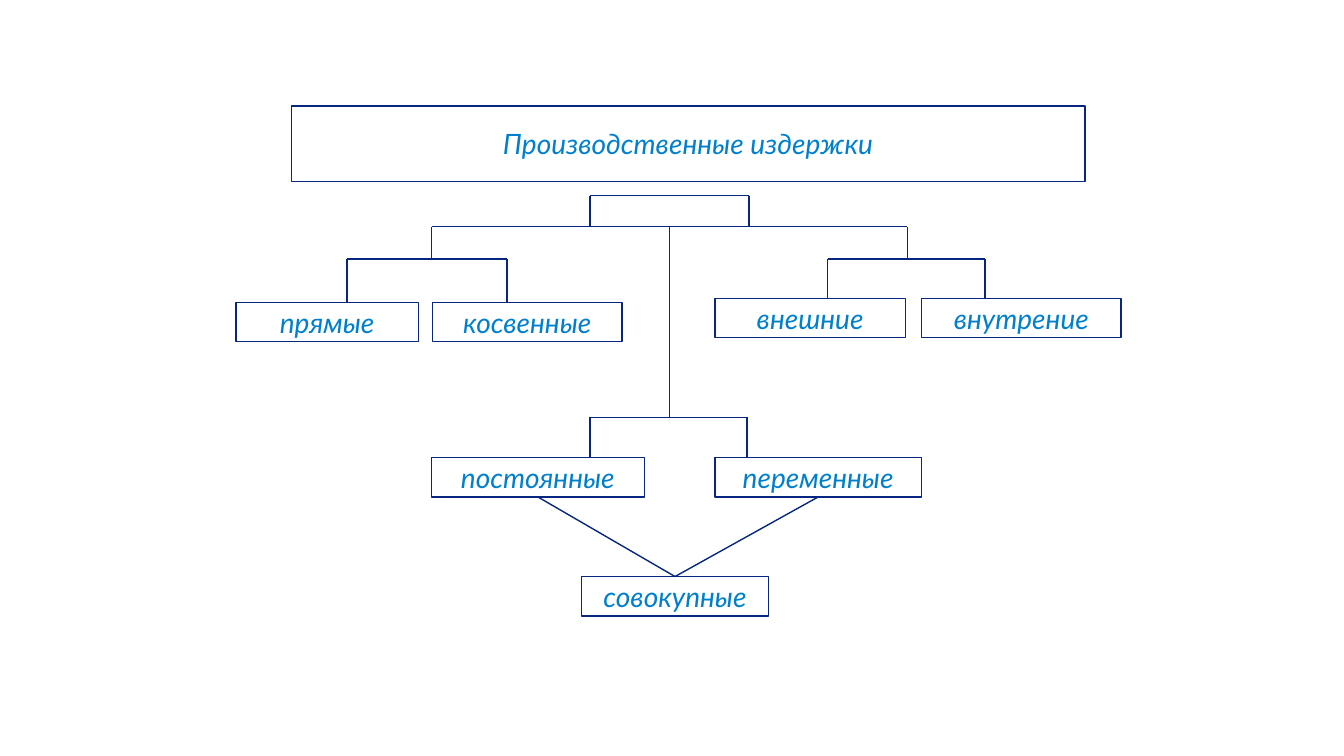
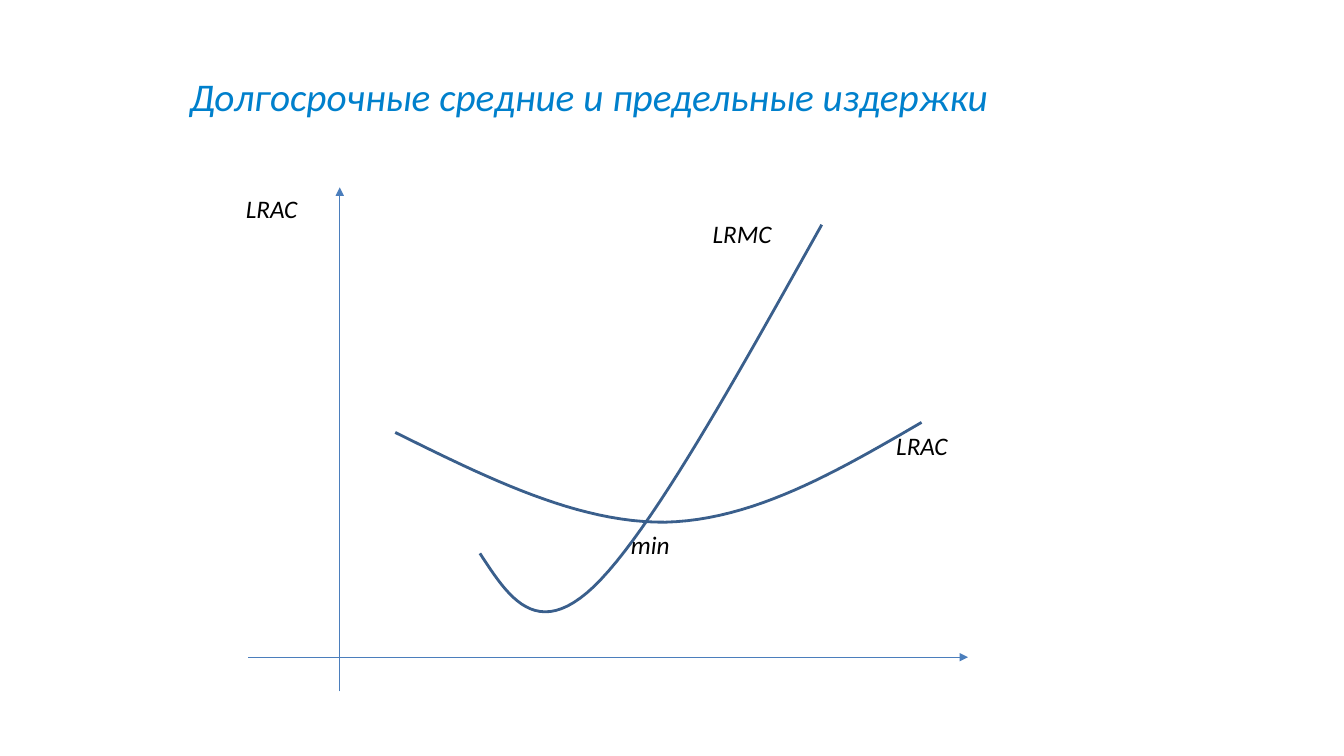
from typing import NamedTuple

from lxml.etree import SubElement
from pptx import Presentation
from pptx.dml.color import RGBColor
from pptx.enum.shapes import MSO_CONNECTOR as CONN, MSO_SHAPE as SHAPE
from pptx.enum.text import MSO_ANCHOR as ANCHOR, MSO_AUTO_SIZE as AUTO, PP_ALIGN as ALIGN
from pptx.oxml.ns import qn
from pptx.util import Inches, Pt

NAVY = RGBColor(0x06, 0x26, 0x80)
AZURE = RGBColor(0x00, 0x80, 0xCC)
AXIS_BLUE = RGBColor(0x4B, 0x7E, 0xBC)
CURVE_BLUE = RGBColor(0x3A, 0x5F, 0x8C)
WHITE = RGBColor(0xFF, 0xFF, 0xFF)
BLACK = RGBColor(0x00, 0x00, 0x00)
TITLE_ONLY = 5
BOX_H = 0.39
CURVE_STEPS = 24


class Box(NamedTuple):
    text: str
    x: float
    y: float
    w: float
    h: float = BOX_H


class Bracket(NamedTuple):
    left: float
    right: float
    top: float
    bottom: float


class Label(NamedTuple):
    text: str
    x: float
    y: float
    w: float


class Line(NamedTuple):
    x1: float
    y1: float
    x2: float
    y2: float


ROOT = Box("Производственные издержки", 2.89, 1.05, 7.87, 0.75)
COSTS = [
    Box("прямые", 2.34, 3, 1.81),
    Box("косвенные", 4.29, 3, 1.88),
    Box("внешние", 7.09, 2.96, 1.89),
    Box("внутрение", 9.14, 2.96, 1.98),
    Box("постоянные", 4.28, 4.54, 2.11),
    Box("переменные", 7.09, 4.54, 2.05),
    Box("совокупные", 5.77, 5.72, 1.85),
]
BRACKETS = [
    Bracket(5.85, 7.43, 1.94, 2.25),
    Bracket(4.28, 9, 2.25, 2.57),
    Bracket(3.44, 5.03, 2.57, 3),
    Bracket(8.21, 9.77, 2.57, 2.96),
    Bracket(5.85, 7.41, 4.14, 4.54),
]
STEM = Line(6.64, 2.25, 6.64, 4.14)

CHART_TITLE = Box("Долгосрочные средние и предельные издержки", 1.78, 0.67, 9.98, 0.57)
AXES = [Line(3.37, 6.86, 3.37, 1.86), Line(2.46, 6.52, 9.6, 6.52)]
LRAC_CURVE = [(3.92, 4.29), (4.83, 4.74), (5.73, 5.19), (6.6, 5.18),
              (7.47, 5.16), (8.3, 4.68), (9.14, 4.19)]
LRMC_CURVE = [(4.76, 5.49), (5.04, 5.92), (5.32, 6.36), (5.89, 5.82),
              (6.46, 5.27), (7.3, 3.75), (8.15, 2.23)]
LABELS = [
    Label("LRAC", 2.34, 1.87, 0.72),
    Label("LRAC", 8.79, 4.22, 0.72),
    Label("LRMC", 6.97, 2.12, 0.79),
    Label("min", 6.16, 5.2, 0.59),
]


def write(s, text: str, *, size: float, font: str = "Calibri", color: RGBColor = AZURE,
          align=ALIGN.LEFT, anchor=ANCHOR.TOP, wrap: bool = True):
    tf = s.text_frame
    tf.auto_size = AUTO.NONE
    tf.word_wrap = wrap
    tf.vertical_anchor = anchor
    p = tf.paragraphs[0]
    p.alignment = align
    r = p.add_run()
    r.text = text
    r.font.name = font
    r.font.size = Pt(size)
    r.font.italic = True
    r.font.color.rgb = color


def add_title(s, box: Box):
    sp = s.shapes.title
    sp.left, sp.top = Inches(box.x), Inches(box.y)
    sp.width, sp.height = Inches(box.w), Inches(box.h)
    return sp


def frame(sp, text: str):
    sp.fill.solid()
    sp.fill.fore_color.rgb = WHITE
    sp.line.color.rgb = NAVY
    sp.line.width = Pt(1)
    write(sp, text, size=20, font="Lato", align=ALIGN.CENTER, anchor=ANCHOR.MIDDLE)


def add_box(s, box: Box):
    sp = s.shapes.add_shape(SHAPE.RECTANGLE, Inches(box.x), Inches(box.y),
                            Inches(box.w), Inches(box.h))
    sp.shadow.inherit = False
    frame(sp, box.text)
    return sp


def add_line(s, line: Line, color: RGBColor = NAVY, width: float = 1, arrow: bool = False):
    c = s.shapes.add_connector(CONN.STRAIGHT, *(Inches(v) for v in line))
    c.line.color.rgb = color
    c.line.width = Pt(width)
    if arrow:
        SubElement(c.line._get_or_add_ln(), qn("a:tailEnd"), type="triangle")
    SubElement(c._element.spPr, qn("a:effectLst"))
    return c


def add_bracket(s, b: Bracket) -> None:
    add_line(s, Line(b.left, b.top, b.right, b.top))
    for x in (b.left, b.right):
        add_line(s, Line(x, b.top, x, b.bottom))


def join(s, upper, lower) -> None:
    c = add_line(s, Line(0, 0, 1, 1))
    c.begin_connect(upper, 2)
    c.end_connect(lower, 0)


def bezier(a: float, b: float, c: float, d: float, t: float) -> float:
    u = 1 - t
    return u**3 * a + 3 * u * u * t * b + 3 * u * t * t * c + t**3 * d


def add_curve(s, knots: list[tuple[float, float]]) -> None:
    points = []
    for i in range(0, len(knots) - 1, 3):
        xs, ys = zip(*knots[i:i + 4])
        for k in range(1, CURVE_STEPS + 1):
            t = k / CURVE_STEPS
            points.append((Inches(bezier(*xs, t)), Inches(bezier(*ys, t))))
    x, y = knots[0]
    fb = s.shapes.build_freeform(Inches(x), Inches(y))
    fb.add_line_segments(points, close=False)
    sp = fb.convert_to_shape()
    sp.shadow.inherit = False
    sp.fill.background()
    sp.line.color.rgb = CURVE_BLUE
    sp.line.width = Pt(2)


def add_label(s, label: Label) -> None:
    sp = s.shapes.add_textbox(Inches(label.x), Inches(label.y), Inches(label.w), Inches(0.4))
    write(sp, label.text, size=18, color=BLACK, wrap=False)


def build_cost_tree(s) -> None:
    frame(add_title(s, ROOT), ROOT.text)
    for b in BRACKETS:
        add_bracket(s, b)
    add_line(s, STEM)
    *_, fixed, variable, total = [add_box(s, box) for box in COSTS]
    for part in (fixed, variable):
        join(s, part, total)


def build_cost_curves(s) -> None:
    for axis in AXES:
        add_line(s, axis, AXIS_BLUE, 0.75, arrow=True)
    for knots in (LRAC_CURVE, LRMC_CURVE):
        add_curve(s, knots)
    for label in LABELS:
        add_label(s, label)
    write(add_title(s, CHART_TITLE), CHART_TITLE.text, size=28)


def main() -> None:
    prs = Presentation()
    prs.slide_width, prs.slide_height = Inches(13.33), Inches(7.5)
    for build in (build_cost_tree, build_cost_curves):
        build(prs.slides.add_slide(prs.slide_layouts[TITLE_ONLY]))
    prs.save("out.pptx")


if __name__ == "__main__":
    main()
